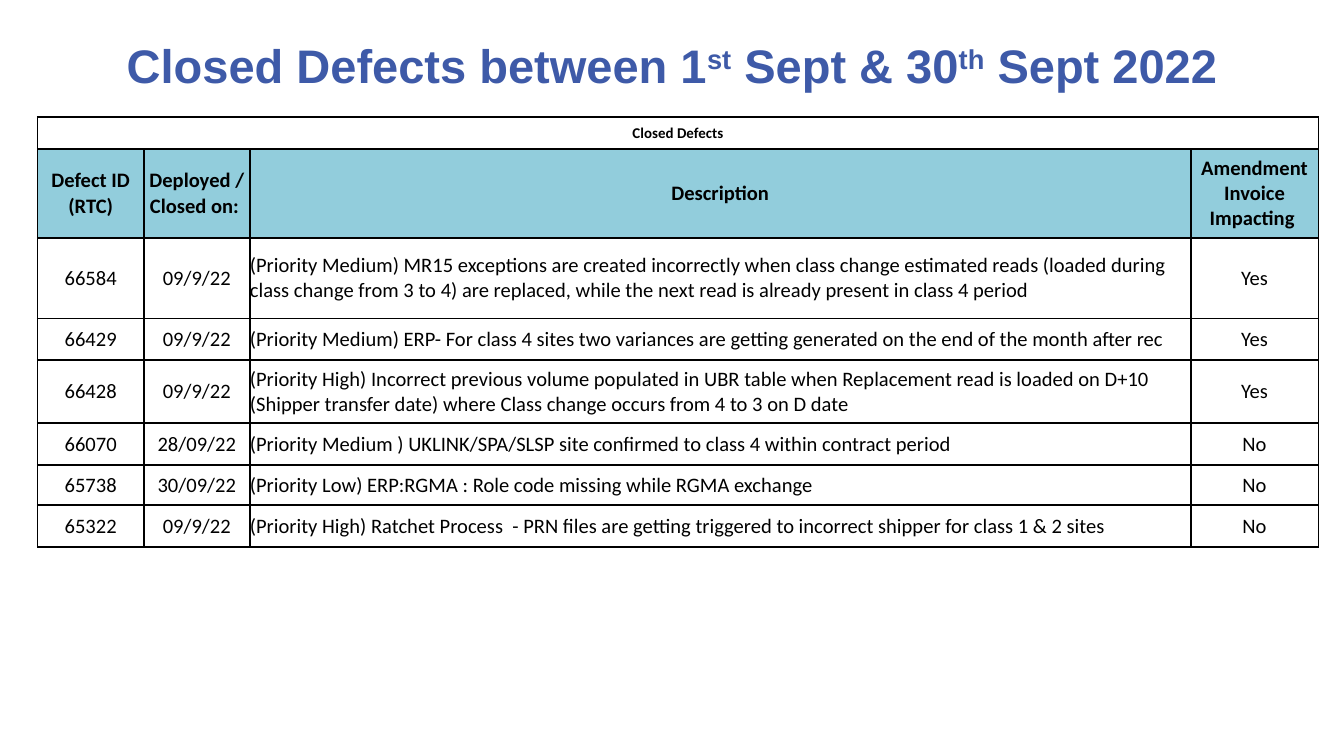
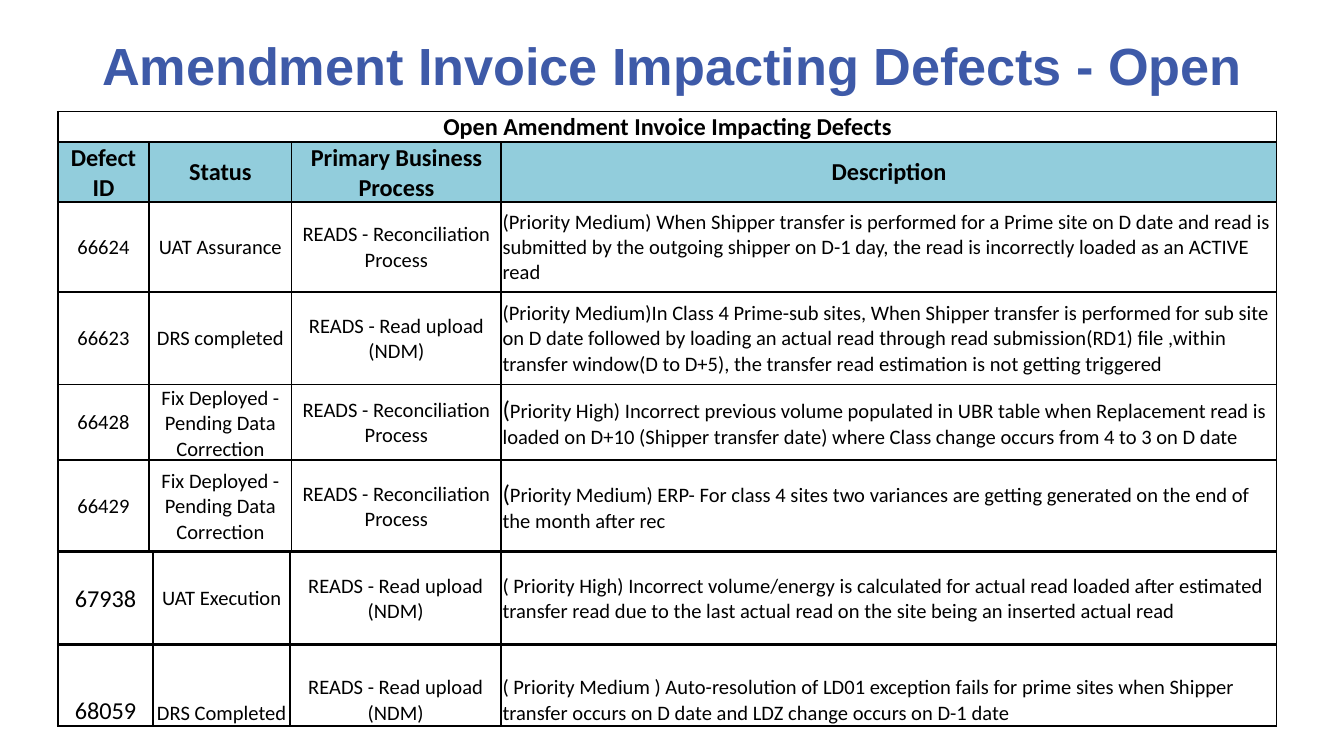
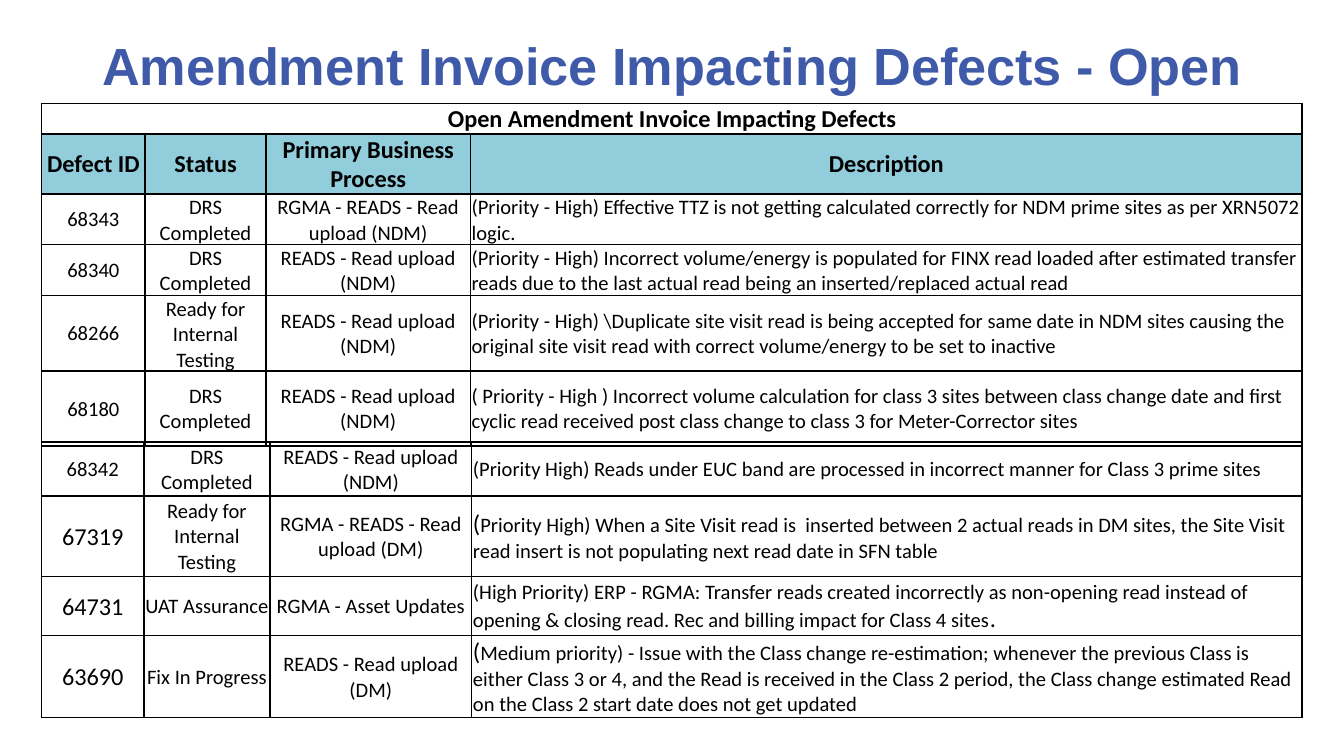
from lxml import etree
from pptx import Presentation
from pptx.dml.color import RGBColor
from pptx.enum.text import MSO_ANCHOR, PP_ALIGN
from pptx.oxml.ns import qn
from pptx.util import Inches, Pt

CENTER, LEFT = PP_ALIGN.CENTER, PP_ALIGN.LEFT
MIDDLE, BOTTOM = MSO_ANCHOR.MIDDLE, MSO_ANCHOR.BOTTOM
TITLE_BLUE = RGBColor(0x3E, 0x5A, 0xA8)
HEADER_TEAL = RGBColor(0x92, 0xCD, 0xDC)
BLACK = RGBColor(0, 0, 0)
SLIDE_WIDTH = 10
SLIDE_HEIGHT = SLIDE_WIDTH * 9 / 16
TITLE_BOX = (0.5, 0.13, 9, 0.7)
BODY_SIZE, LARGE_SIZE = 11, 13
BORDER_WIDTH = Pt(1)

CLOSED_STYLE = {"margins": (0, 0, 0, 0), "caption_size": 8, "caption_anchor": MIDDLE, "header_size": BODY_SIZE}
OPEN_STYLE = {"margins": (0.01, 0.01, 0.01, 0), "caption_size": LARGE_SIZE, "caption_anchor": BOTTOM,
              "header_size": LARGE_SIZE}


def large(text):
    return (text, LARGE_SIZE)


OPEN_TITLE = ["Amendment Invoice Impacting Defects - Open"]
OPEN_CAPTION = "Open Amendment Invoice Impacting Defects"
OPEN_HEADER = ("Defect ID", "Status", "Primary Business Process", "Description")
RECONCILIATION = "READS - Reconciliation Process"
UPLOAD_NDM = "READS - Read upload (NDM)"
FIX_DEPLOYED = "Fix Deployed - Pending Data Correction"
READY = "Ready for Internal Testing"
DRS = "DRS Completed"

SLIDES = [
    {
        "title": ["Closed Defects between 1", "st", " Sept & 30", "th", " Sept 2022"],
        "title_size": 25.2, "left": 0.28, "style": CLOSED_STYLE,
        "tables": [
            {
                "top": 0.87, "columns": (0.79, 0.79, 7, 0.95),
                "caption": (0.24, "Closed Defects"),
                "header": (0.66, ("Defect ID (RTC)", "Deployed / Closed on: ", "Description",
                                  "Amendment Invoice Impacting ")),
                "rows": [
                    (0.6, ("66584", "09/9/22", "(Priority Medium) MR15 exceptions are created incorrectly when "
                           "class change estimated reads (loaded during class change from 3 to 4) are replaced, "
                           "while the next read is already present in class 4 period", "Yes")),
                    (0.31, ("66429", "09/9/22", "(Priority Medium) ERP- For class 4 sites two variances are "
                            "getting generated on the end of the month after rec", "Yes")),
                    (0.47, ("66428", "09/9/22", "(Priority High) Incorrect previous volume populated in UBR "
                            "table when Replacement read is loaded on D+10 (Shipper transfer date) where Class "
                            "change occurs from 4 to 3 on D date", "Yes")),
                    (0.31, ("66070", "28/09/22", "(Priority Medium ) UKLINK/SPA/SLSP site confirmed to class 4 "
                            "within contract period", "No")),
                    (0.3, ("65738", "30/09/22", "(Priority Low) ERP:RGMA : Role code missing while RGMA "
                           "exchange", "No")),
                ],
            },
            {
                "top": 3.76, "columns": (0.79, 0.79, 7, 0.95),
                "rows": [
                    (0.31, ("65322", "09/9/22", "(Priority High) Ratchet Process  - PRN files are getting "
                            "triggered to incorrect shipper for class 1 & 2 sites", "No")),
                ],
            },
        ],
    },
    {
        "title": OPEN_TITLE, "title_size": 28, "left": 0.43, "style": OPEN_STYLE,
        "tables": [
            {
                "top": 0.83, "columns": (0.68, 1.06, 1.56, 5.77),
                "caption": (0.22, OPEN_CAPTION), "header": (0.44, OPEN_HEADER),
                "rows": [
                    (0.67, ("66624", "UAT Assurance", RECONCILIATION, "(Priority Medium) When Shipper transfer "
                            "is performed for a Prime site on D date and read is submitted by the outgoing "
                            "shipper on D-1 day, the read is incorrectly loaded as an ACTIVE read")),
                    (0.69, ("66623", "DRS completed", UPLOAD_NDM, "(Priority Medium)In Class 4 Prime-sub sites, "
                            "When Shipper transfer is performed for sub site on D date followed by loading an "
                            "actual read through read submission(RD1) file ,within transfer window(D to D+5), "
                            "the transfer read estimation is not getting triggered")),
                    (0.54, ("66428", FIX_DEPLOYED, RECONCILIATION, [
                        large("("), "Priority High) Incorrect previous volume populated in UBR table when "
                        "Replacement read is loaded on D+10 (Shipper transfer date) where Class change occurs "
                        "from 4 to 3 on D date"])),
                    (0.69, ("66429", FIX_DEPLOYED, RECONCILIATION, [
                        large("("), "Priority Medium) ERP- For class 4 sites two variances are getting generated "
                        "on the end of the month after rec"])),
                ],
            },
            {
                "top": 4.1, "columns": (0.71, 1.02, 1.57, 5.77),
                "rows": [
                    (0.7, ([large("67938")], "UAT Execution", UPLOAD_NDM, "( Priority High) Incorrect "
                           "volume/energy is calculated for actual read loaded after estimated transfer read due "
                           "to the last actual read on the site being an inserted actual read")),
                ],
            },
            {
                "top": 4.79, "columns": (0.71, 1.02, 1.57, 5.77), "anchor": BOTTOM,
                "rows": [
                    (0.61, ([large("68059")], DRS, UPLOAD_NDM, "( Priority Medium ) Auto-resolution of LD01 "
                            "exception fails for prime sites when Shipper transfer occurs on D date and LDZ "
                            "change occurs on D-1 date")),
                ],
            },
        ],
    },
    {
        "title": OPEN_TITLE, "title_size": 28, "left": 0.31, "style": OPEN_STYLE,
        "tables": [
            {
                "top": 0.77, "columns": (0.77, 0.9, 1.52, 6.19),
                "caption": (0.19, OPEN_CAPTION), "header": (0.37, OPEN_HEADER),
                "rows": [
                    (0.36, ("68343", DRS, "RGMA - READS - Read upload (NDM)", "(Priority - High) Effective TTZ is "
                            "not getting calculated correctly for NDM prime sites as per XRN5072 logic.")),
                    (0.38, ("68340", DRS, UPLOAD_NDM, "(Priority - High) Incorrect volume/energy is populated for "
                            "FINX read loaded after estimated transfer reads due to the last actual read being "
                            "an inserted/replaced actual read")),
                    (0.44, ("68266", READY, UPLOAD_NDM, "(Priority - High) \\Duplicate site visit read is being "
                            "accepted for same date in NDM sites causing the original site visit read with "
                            "correct volume/energy to be set to inactive")),
                    (0.56, ("68180", DRS, UPLOAD_NDM, "( Priority - High ) Incorrect volume calculation for class "
                            "3 sites between class change date and first cyclic read received post class change "
                            "to class 3 for Meter-Corrector sites")),
                ],
            },
            {
                "top": 3.29, "columns": (0.76, 0.94, 1.5, 6.18),
                "rows": [
                    (0.4, ("68342", DRS, UPLOAD_NDM, "(Priority High) Reads under EUC band are processed in "
                           "incorrect manner for Class 3 prime sites")),
                    (0.6, ([large("67319")], READY, "RGMA - READS - Read upload (DM)", [
                        large("("), "Priority High) When a Site Visit read is  inserted between 2 actual reads in "
                        "DM sites, the Site Visit read insert is not populating next read date in SFN table"])),
                    (0.44, ([large("64731")], "UAT Assurance", "RGMA - Asset Updates", [
                        "(High Priority) ERP - RGMA: Transfer reads created incorrectly as non-opening read "
                        "instead of opening & closing read. Rec and billing impact for Class 4 sites",
                        large(".")])),
                    (0.61, ([large("63690")], "Fix In Progress", "READS - Read upload (DM)", [
                        large("("), "Medium priority) - Issue with the Class change re-estimation; whenever the "
                        "previous Class is either Class 3 or 4, and the Read is received in the Class 2 period, "
                        "the Class change estimated Read on the Class 2 start date does not get updated"])),
                ],
            },
        ],
    },
]


def set_font(font, name, size, color, bold):
    font.name, font.size, font.bold = name, Pt(size), bold
    font.color.rgb = color


def add_title(slide, parts, size):
    frame = slide.shapes.add_textbox(*map(Inches, TITLE_BOX)).text_frame
    frame.word_wrap = True
    frame.vertical_anchor = MIDDLE
    paragraph = frame.paragraphs[0]
    paragraph.alignment = CENTER
    set_font(paragraph.font, "Arial", size, TITLE_BLUE, True)
    for index, part in enumerate(parts):
        run = paragraph.add_run()
        run.text = part
        if index % 2:
            run._r.get_or_add_rPr().set("baseline", "30000")


def add_borders(cell):
    properties = cell._tc.get_or_add_tcPr()
    for side in ("lnL", "lnR", "lnT", "lnB"):
        line = etree.SubElement(properties, qn(f"a:{side}"), w=str(BORDER_WIDTH))
        fill = etree.SubElement(line, qn("a:solidFill"))
        etree.SubElement(fill, qn("a:srgbClr"), val=str(BLACK))


def write_cell(cell, content, size, bold, alignment, anchor, fill_color, margins):
    cell.margin_left, cell.margin_top, cell.margin_right, cell.margin_bottom = map(Inches, margins)
    cell.vertical_anchor = anchor
    add_borders(cell)
    if fill_color is None:
        cell.fill.background()
    else:
        cell.fill.solid()
        cell.fill.fore_color.rgb = fill_color
    if not content:
        return
    paragraph = cell.text_frame.paragraphs[0]
    paragraph.alignment = alignment
    parts = [content] if isinstance(content, str) else content
    runs = [(part, size) if isinstance(part, str) else part for part in parts]
    base_size = runs[0][1] if len(runs) == 1 else size
    set_font(paragraph.font, "Calibri", base_size, BLACK, bold)
    for text, run_size in runs:
        run = paragraph.add_run()
        run.text = text
        if run_size != base_size:
            run.font.size = Pt(run_size)


def add_defect_table(slide, left, content, style):
    columns = content["columns"]
    description = columns.index(max(columns))
    body_anchor = content.get("anchor", MIDDLE)
    lines = []
    if "caption" in content:
        height, caption = content["caption"]
        blanks = [""] * (len(columns) - 1)
        lines.append((height, [caption] + blanks, style["caption_size"], True, style["caption_anchor"], None))
        lines.append((*content["header"], style["header_size"], True, MIDDLE, HEADER_TEAL))
    lines += [(*row, BODY_SIZE, False, body_anchor, None) for row in content["rows"]]

    total_height = sum(line[0] for line in lines)
    frame = slide.shapes.add_table(len(lines), len(columns), Inches(left), Inches(content["top"]),
                                   Inches(sum(columns)), Inches(total_height))
    table = frame.table
    table.first_row = table.horz_banding = False
    for column, width in zip(table.columns, columns):
        column.width = Inches(width)
    for row_index, (height, cells, size, bold, anchor, fill_color) in enumerate(lines):
        table.rows[row_index].height = Inches(height)
        for column_index, text in enumerate(cells):
            alignment = LEFT if column_index == description and not bold else CENTER
            write_cell(table.cell(row_index, column_index), text, size, bold, alignment, anchor, fill_color,
                       style["margins"])
    if "caption" in content:
        table.cell(0, 0).merge(table.cell(0, len(columns) - 1))


def main():
    presentation = Presentation()
    presentation.slide_width = Inches(SLIDE_WIDTH)
    presentation.slide_height = Inches(SLIDE_HEIGHT)
    for content in SLIDES:
        slide = presentation.slides.add_slide(presentation.slide_layouts[6])
        add_title(slide, content["title"], content["title_size"])
        for table in content["tables"]:
            add_defect_table(slide, content["left"], table, content["style"])
    presentation.save("out.pptx")


if __name__ == "__main__":
    main()
